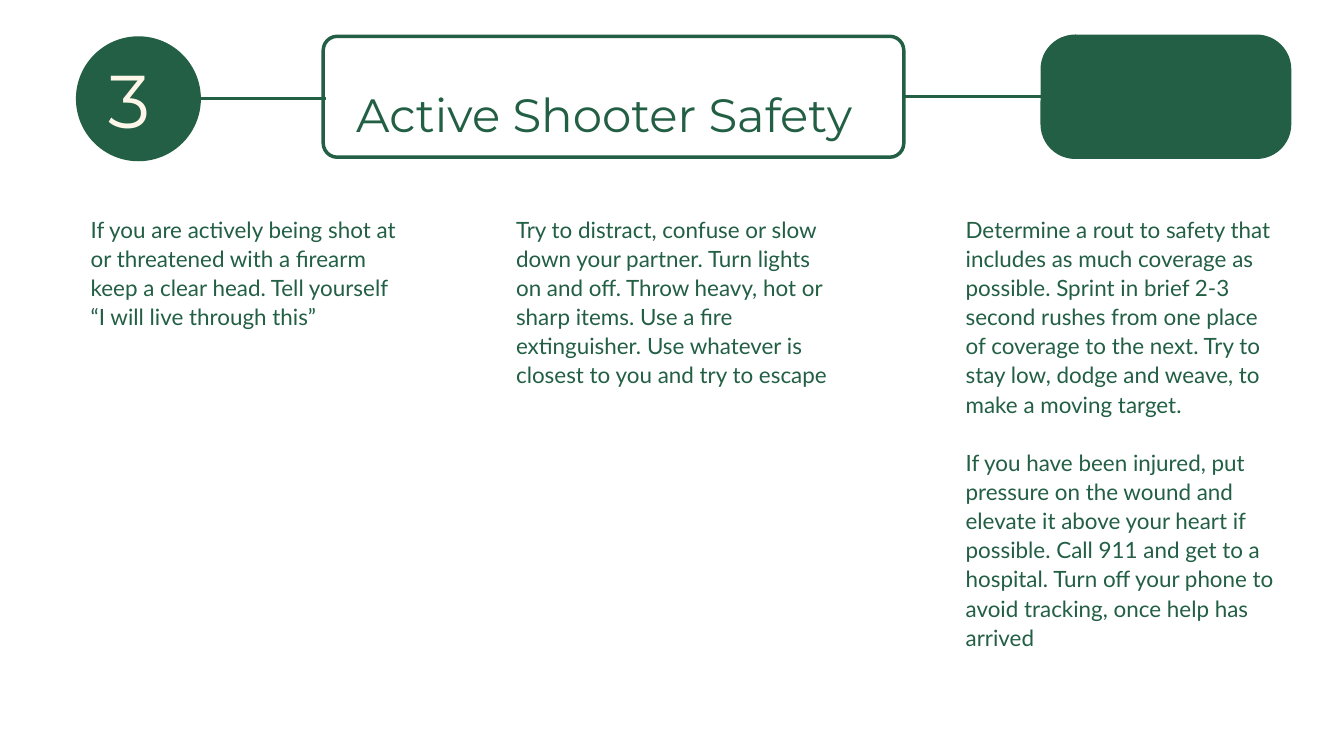
from lxml.etree import SubElement
from pptx import Presentation
from pptx.dml.color import RGBColor
from pptx.enum.shapes import MSO_CONNECTOR, MSO_SHAPE
from pptx.enum.text import PP_ALIGN
from pptx.oxml.ns import qn
from pptx.util import Inches, Pt

COLORS = {"green": "225F44", "cream": "FFF6EA"}
COLUMN_LEFTS = [1.35, 7.68, 14.37]
COLUMN_HEIGHTS = [2.14, 3.01, 6.92]
COLUMN_TEXTS = [
    ["If you are actively being shot at or threatened with a firearm keep a clear head. "
     "Tell yourself “I will live through this”"],
    ["Try to distract, confuse or slow down your partner. Turn lights on and off. "
     "Throw heavy, hot or sharp items. Use a fire extinguisher. "
     "Use whatever is closest to you and try to escape"],
    ["Determine a rout to safety that includes as much coverage as possible. "
     "Sprint in brief 2-3 second rushes from one place of coverage to the next. "
     "Try to stay low, dodge and weave, to make a moving target.",
     "If you have been injured, put pressure on the wound and elevate it above your "
     "heart if possible. Call 911 and get to a hospital. "
     "Turn off your phone to avoid tracking, once help has arrived"],
]


def color(name):
    return RGBColor.from_string(COLORS[name])


def add_shape(page, kind, bounds, filled=True, outlined=True, radius=None):
    """Add a green shape; radius is the corner radius in inches."""
    shape = page.shapes.add_shape(kind, *map(Inches, bounds))
    shape.shadow.inherit = False
    if radius is not None:
        shape.adjustments[0] = radius / min(bounds[2:])
    if filled:
        shape.fill.solid()
        shape.fill.fore_color.rgb = color("green")
    else:
        shape.fill.background()
    if outlined:
        shape.line.color.rgb = color("green")
        shape.line.width = Pt(3.75)
    else:
        shape.line.fill.background()
    return shape


def add_rule(page, left, right, height):
    """Add a horizontal connecting line."""
    rule = page.shapes.add_connector(
        MSO_CONNECTOR.STRAIGHT, Inches(left), Inches(height), Inches(right), Inches(height))
    rule.line.color.rgb = color("green")
    rule.line.width = Pt(3)
    SubElement(rule._element.spPr, qn("a:effectLst"))
    return rule


def add_text(page, bounds, texts, font, size, spacing, ink="green", align=PP_ALIGN.LEFT):
    """Add a text box whose paragraphs stand one line apart."""
    box = page.shapes.add_textbox(*map(Inches, bounds))
    frame = box.text_frame
    frame.word_wrap = True
    frame.margin_left = frame.margin_top = frame.margin_right = frame.margin_bottom = 0
    for index, text in enumerate(texts):
        para = frame.add_paragraph() if index else frame.paragraphs[0]
        para.text = text
        para.alignment = align
        para.line_spacing = Pt(spacing)
        para.space_before = Pt(spacing if index else 0)
        para.font.name = font
        para.font.size = Pt(size)
        para.font.color.rgb = color(ink)


def add_header(page):
    title = add_shape(page, MSO_SHAPE.ROUNDED_RECTANGLE, (4.81, 0.54, 8.64, 1.8),
                      filled=False, radius=0.21)
    add_shape(page, MSO_SHAPE.OVAL, (1.13, 0.54, 1.86, 1.86), outlined=False)
    add_rule(page, 2.32, 4.85, 1.47)
    add_text(page, (5.3, 0.77, 7.88, 1.18), ["Active Shooter Safety"],
             "Montserrat", 50, 96, align=PP_ALIGN.JUSTIFY)
    add_rule(page, 13.45, 19.01, 1.44).begin_connect(title, 3)
    add_shape(page, MSO_SHAPE.ROUNDED_RECTANGLE, (15.51, 0.54, 3.68, 1.8), radius=0.49)
    add_text(page, (1.62, 0.8, 0.4, 1.35), ["3"],
             "Montserrat", 80, 96, "cream", PP_ALIGN.JUSTIFY)


def main():
    deck = Presentation()
    deck.slide_width, deck.slide_height = Inches(20), Inches(11.25)
    page = deck.slides.add_slide(deck.slide_layouts[6])
    add_header(page)
    for left, height, texts in zip(COLUMN_LEFTS, COLUMN_HEIGHTS, COLUMN_TEXTS):
        add_text(page, (left, 3.18, 4.64, height), texts, "Lato", 24, 31.2)
    deck.save("out.pptx")


if __name__ == "__main__":
    main()
